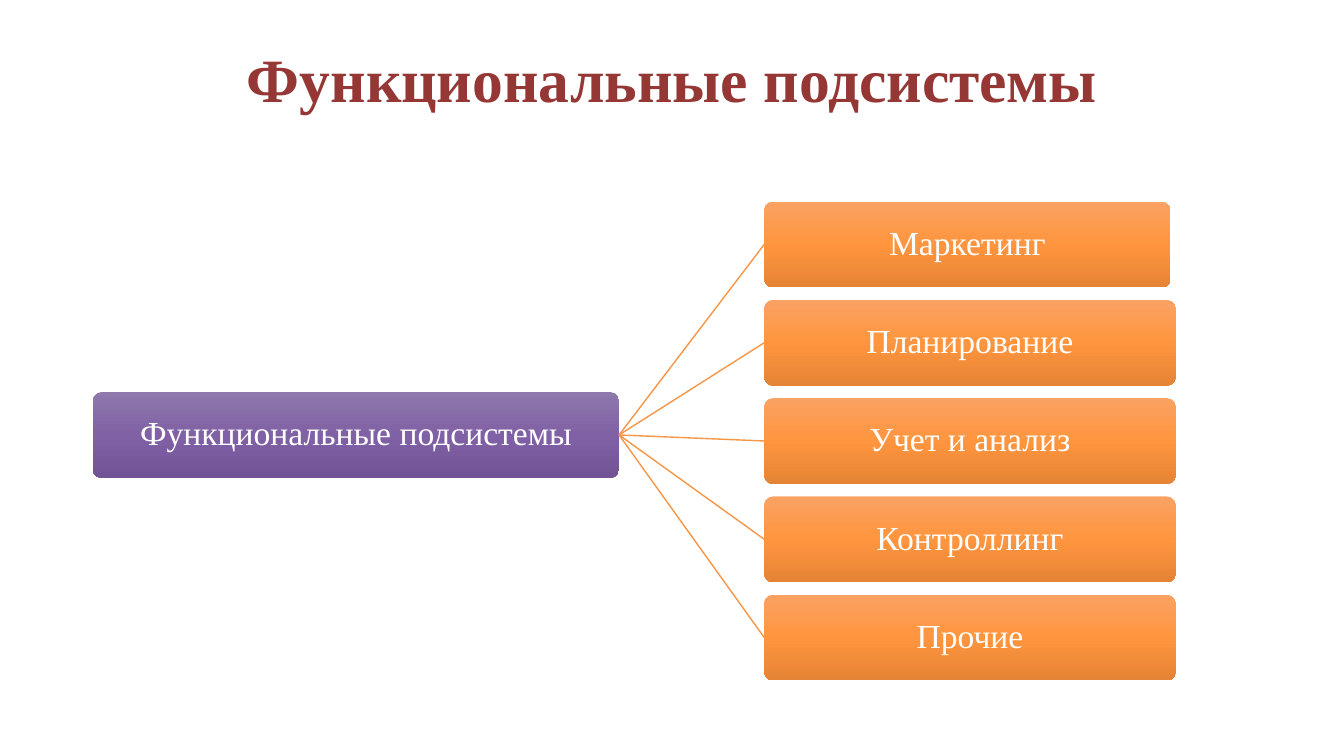
from lxml import etree
from pptx import Presentation
from pptx.dml.color import RGBColor
from pptx.enum.shapes import MSO_CONNECTOR, MSO_SHAPE
from pptx.enum.text import MSO_ANCHOR, PP_ALIGN
from pptx.oxml.ns import qn
from pptx.util import Inches, Pt

ROUNDED = MSO_SHAPE.ROUNDED_RECTANGLE
STRAIGHT = MSO_CONNECTOR.STRAIGHT
CENTER = PP_ALIGN.CENTER
TOP, MIDDLE = MSO_ANCHOR.TOP, MSO_ANCHOR.MIDDLE
LEFT_SIDE, RIGHT_SIDE = 1, 3

FONT = "Times New Roman"
COLORS = {"title": "953735", "text": "FFFFFF", "line": "F79646"}
GRADIENTS = {
    "root": {0: "8E78AC", 50: "8061A5", 100: "715396"},
    "branch": {0: "FAA263", 50: "FF953E", 100: "E58435"},
}

# Grid in inches: two columns, and evenly spaced rows on the right
ROOT_X, ROOT_Y, ROOT_W = 0.92, 3.89, 5.22
BRANCH_X, BRANCH_W, FIRST_W = 7.58, 4.08, 4.03
FIRST_ROW, LAST_ROW = 2.0, 5.9
BOX_H = 0.85

TITLE = "Функциональные подсистемы"
BRANCHES = ["Маркетинг", "Планирование", "Учет и анализ", "Контроллинг", "Прочие"]


def write(sp, text, size, color, anchor, inset, bold=False):
    tf = sp.text_frame
    tf.word_wrap = True
    tf.vertical_anchor = anchor
    tf.margin_left = tf.margin_right = tf.margin_top = tf.margin_bottom = Inches(inset)
    tf.text = text
    p = tf.paragraphs[0]
    p.alignment = CENTER
    p.line_spacing = 0.9
    font = p.runs[0].font
    font.name, font.size, font.bold = FONT, Pt(size), bold
    font.color.rgb = RGBColor.from_string(COLORS[color])


def fill_gradient(sp, stops):
    sp.fill.gradient()
    sp.fill.gradient_angle = 270
    stop_list = sp._element.spPr.find(qn("a:gradFill")).find(qn("a:gsLst"))
    for stop in list(stop_list):
        stop_list.remove(stop)
    for percent, color in stops.items():
        stop = etree.SubElement(stop_list, qn("a:gs"), pos=str(percent * 1000))
        etree.SubElement(stop, qn("a:srgbClr"), val=color)


def add_title(s):
    sp = s.shapes.add_textbox(Inches(0.92), Inches(0.4), Inches(11.5), Inches(1.45))
    write(sp, TITLE, 44, "title", TOP, 0.09, bold=True)


def add_box(s, text, x, y, width, gradient):
    sp = s.shapes.add_shape(ROUNDED, Inches(x), Inches(y), Inches(width), Inches(BOX_H))
    sp.adjustments[0] = 0.1
    sp.shadow.inherit = False
    sp.line.fill.background()
    fill_gradient(sp, GRADIENTS[gradient])
    write(sp, text, 24, "text", MIDDLE, 0.04)
    return sp


def add_link(s, start, end):
    link = s.shapes.add_connector(STRAIGHT, 0, 0, 0, 0)
    link.begin_connect(start, RIGHT_SIDE)
    link.end_connect(end, LEFT_SIDE)
    link.line.width = Pt(1)
    link.line.color.rgb = RGBColor.from_string(COLORS["line"])
    etree.SubElement(link._element.spPr, qn("a:effectLst"))


def main():
    prs = Presentation()
    prs.slide_width, prs.slide_height = Inches(13.33), Inches(7.5)
    s = prs.slides.add_slide(prs.slide_layouts[6])

    add_title(s)

    # Tree: one root joined to every branch
    root = add_box(s, TITLE, ROOT_X, ROOT_Y, ROOT_W, "root")
    pitch = (LAST_ROW - FIRST_ROW) / (len(BRANCHES) - 1)
    for row, name in enumerate(BRANCHES):
        width = BRANCH_W if row else FIRST_W
        branch = add_box(s, name, BRANCH_X, FIRST_ROW + row * pitch, width, "branch")
        add_link(s, root, branch)

    prs.save("out.pptx")


if __name__ == "__main__":
    main()
